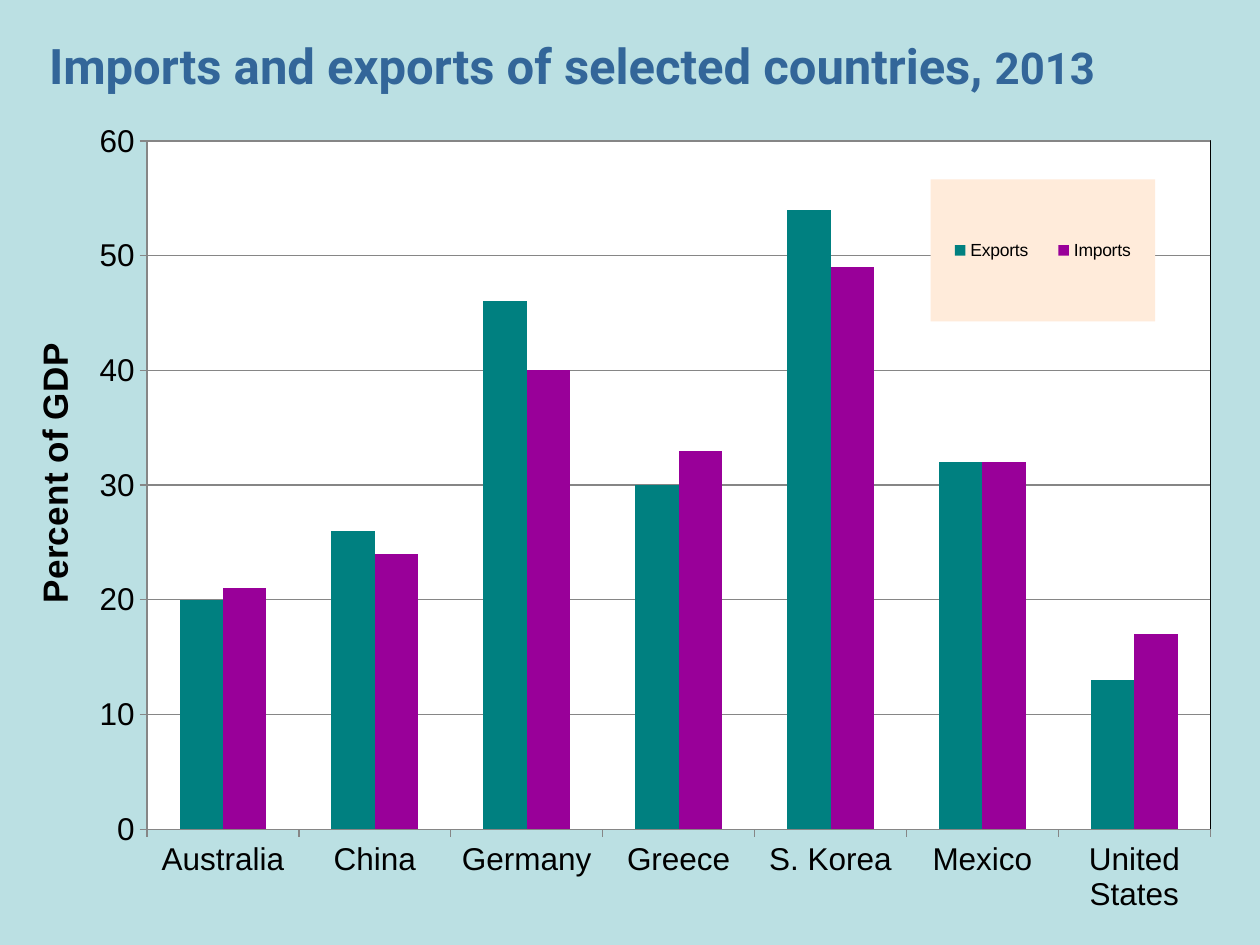
from pptx import Presentation
from pptx.chart.data import CategoryChartData
from pptx.dml.color import RGBColor
from pptx.enum.chart import XL_CHART_TYPE, XL_LEGEND_POSITION, XL_TICK_MARK
from pptx.enum.text import MSO_ANCHOR
from pptx.oxml import parse_xml
from pptx.oxml.ns import nsdecls, qn
from pptx.util import Pt

# Content
TITLE_RUNS = [("Imports and exports of selected countries, ", 28), ("2013", 25)]
COUNTRIES = ["Australia", "China", "Germany", "Greece", "S. Korea", "Mexico", "United States"]
SERIES = [
    ("Exports", "008080", [20, 26, 46, 30, 54, 32, 13]),
    ("Imports", "990099", [21, 24, 40, 33, 49, 32, 17]),
]
AXIS_TITLE = "Percent of GDP"
GREY = "868686"


def color(value):
    return RGBColor.from_string(value)


def set_layout(element, index, x, y, width=None, height=None, inner=False):
    """Place a chart part at fractions of the chart area."""
    for old in element.findall(qn("c:layout")):
        element.remove(old)
    target = '<c:layoutTarget val="inner"/>' if inner else ""
    values = [("xMode", "edge"), ("yMode", "edge"), ("x", x), ("y", y), ("w", width), ("h", height)]
    parts = "".join(f'<c:{tag} val="{value}"/>' for tag, value in values if value is not None)
    element.insert(index, parse_xml(
        f'<c:layout {nsdecls("c")}><c:manualLayout>{target}{parts}</c:manualLayout></c:layout>'))


def shape_properties(fill, line):
    outline = f'<a:solidFill><a:srgbClr val="{line}"/></a:solidFill>' if line else "<a:noFill/>"
    return parse_xml(
        f'<c:spPr {nsdecls("c", "a")}><a:solidFill><a:srgbClr val="{fill}"/></a:solidFill>'
        f'<a:ln w="9525">{outline}</a:ln></c:spPr>')


presentation = Presentation()
presentation.slide_width, presentation.slide_height = Pt(720), Pt(540)
slide = presentation.slides.add_slide(presentation.slide_layouts[6])
slide.background.fill.solid()
slide.background.fill.fore_color.rgb = color("BBE0E3")

# Chart
data = CategoryChartData()
data.categories = COUNTRIES
for name, _, values in SERIES:
    data.add_series(name, values)
chart = slide.shapes.add_chart(XL_CHART_TYPE.COLUMN_CLUSTERED, Pt(7.2), Pt(65.6),
                               Pt(685.8), Pt(466.6), data).chart
chart.has_title = False
chart.font.name = "Arial"
chart.font.size = Pt(10)
chart.font.color.rgb = color("000000")

plot = chart.plots[0]
plot.gap_width, plot.overlap = 150, 0
plot.vary_by_categories = False
for series, (_, fill, _) in zip(plot.series, SERIES):
    series.format.fill.solid()
    series.format.fill.fore_color.rgb = color(fill)

plot_area = chart._chartSpace.chart.plotArea
set_layout(plot_area, 0, 0.112, 0.032, 0.886, 0.843, inner=True)
plot_area.append(shape_properties("FFFFFF", "000000"))

# Axes
category_axis, value_axis = chart.category_axis, chart.value_axis
for axis in (category_axis, value_axis):
    axis.major_tick_mark = XL_TICK_MARK.OUTSIDE
    axis.tick_labels.font.size = Pt(18)
    axis.tick_labels.font.name = "Arial"
    axis.format.line.color.rgb = color(GREY)
value_axis.minimum_scale, value_axis.maximum_scale, value_axis.major_unit = 0, 60, 10
value_axis.tick_labels.number_format = "0"
value_axis.tick_labels.number_format_is_linked = False
value_axis.has_major_gridlines = True
value_axis.major_gridlines.format.line.color.rgb = color(GREY)
value_axis.major_gridlines.format.line.width = Pt(0.75)

axis_title = value_axis.axis_title
axis_title.text_frame.text = AXIS_TITLE
font = axis_title.text_frame.paragraphs[0].font
font.name, font.size, font.bold = "Arial", Pt(20), True
body = axis_title._element.find(".//" + qn("a:bodyPr"))
body.set("rot", "-5400000")
body.set("vert", "horz")
set_layout(axis_title._element, 1, 0.011, 0.272)

# Legend
chart.has_legend = True
legend = chart.legend
legend.position = XL_LEGEND_POSITION.RIGHT
legend.include_in_layout = True
legend.font.size = Pt(10)
legend.font.name = "Arial"
set_layout(legend._element, 1, 0.765, 0.079, 0.187, 0.174)
legend._element.find(qn("c:txPr")).addprevious(shape_properties("FFEBDA", None))

# Title
title = slide.shapes.add_textbox(Pt(28), Pt(10), Pt(683), Pt(52))
frame = title.text_frame
frame.word_wrap = True
frame.vertical_anchor = MSO_ANCHOR.MIDDLE
frame.margin_left = frame.margin_top = frame.margin_right = frame.margin_bottom = 0
paragraph = frame.paragraphs[0]
paragraph.line_spacing = 1.05
paragraph.font.name = "Roboto"
paragraph.font.bold = True
paragraph.font.color.rgb = color("336699")
for text, size in TITLE_RUNS:
    run = paragraph.add_run()
    run.text = text
    run.font.size = Pt(size)

presentation.save("out.pptx")
